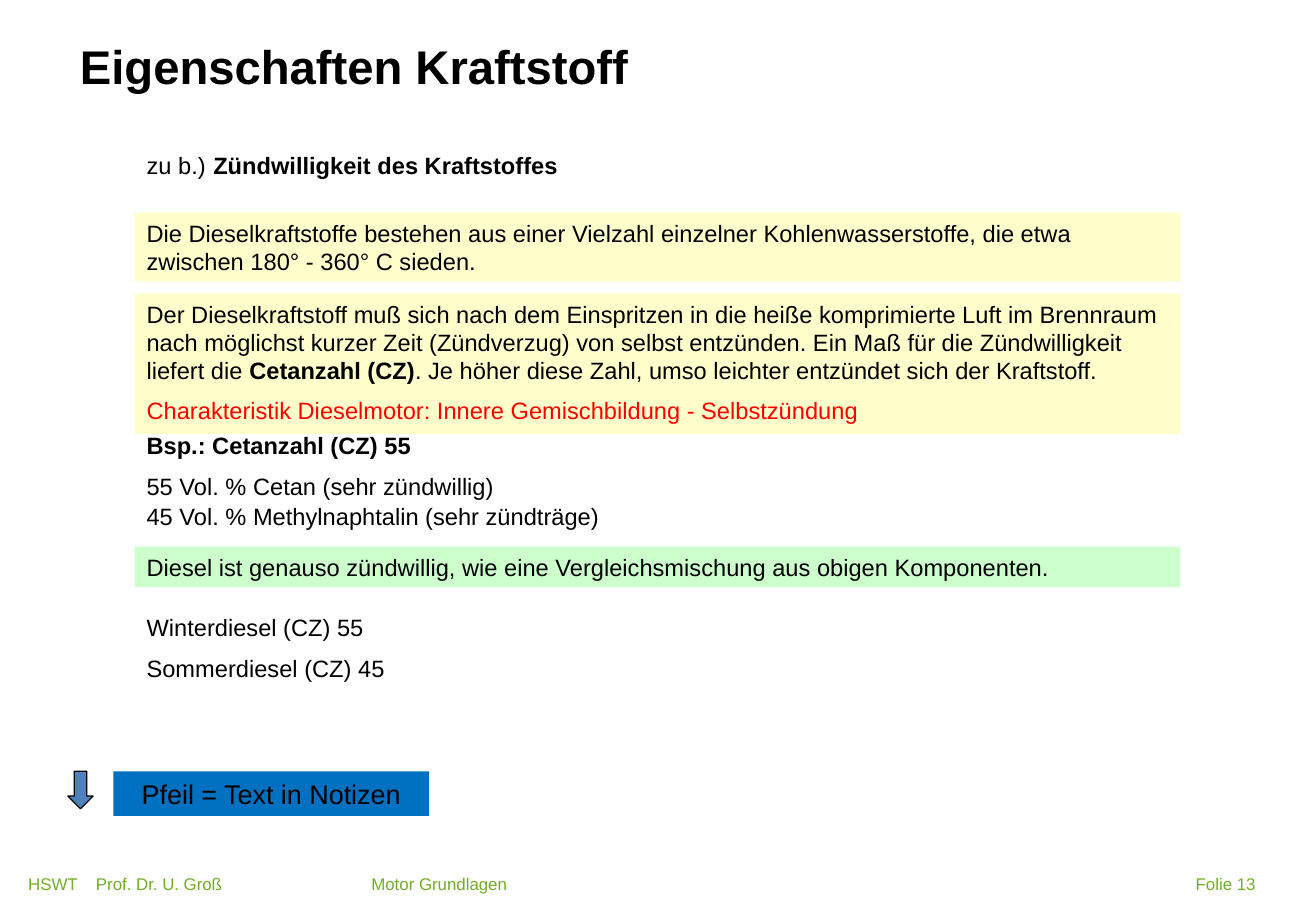
import pptx
import pptx.dml.color
import pptx.enum.shapes
import pptx.enum.text
import pptx.oxml
import pptx.oxml.ns
import pptx.util

PX = 7620  # EMU in one px, 120 px to the inch

THEME = {
    "font": "Arial",
    "black": "000000", "red": "FF0000", "footer_green": "71AD2A",
    "yellow": "FFFFCC", "mint": "CCFFCC", "blue": "0070C0", "arrow_blue": "4F81BD",
    "title": 28, "label": 16, "body": 14, "footer": 10,
}
ALIGN = pptx.enum.text.PP_ALIGN
SHAPES = pptx.enum.shapes.MSO_SHAPE


def rgb(name):
    return pptx.dml.color.RGBColor.from_string(THEME[name])


def write(frame, paragraphs, size="body", color="black", bold=False, align=ALIGN.LEFT):
    """Fill a frame; a paragraph is a text or a list of (text, format) spans."""
    frame.word_wrap = True
    for index, spans in enumerate(paragraphs):
        para = frame.add_paragraph() if index else frame.paragraphs[0]
        para.alignment = align
        if index:
            para.space_before = pptx.util.Pt(THEME[size] / 2)
        for text, style in [(spans, {})] if isinstance(spans, str) else spans:
            span = para.add_run()
            span.text = text
            span.font.name = THEME["font"]
            span.font.size = pptx.util.Pt(THEME[style.get("size", size)])
            span.font.bold = style.get("bold", bold)
            span.font.color.rgb = rgb(style.get("color", color))


deck = pptx.Presentation()
deck.slide_width, deck.slide_height = 1300 * PX, 900 * PX
page = deck.slides.add_slide(deck.slide_layouts[5])

title = page.shapes.title
title.left, title.top, title.width, title.height = 67 * PX, 25 * PX, 1144 * PX, 80 * PX
title.text_frame.vertical_anchor = pptx.enum.text.MSO_ANCHOR.MIDDLE
write(title.text_frame, ["Eigenschaften Kraftstoff"], size="title", bold=True)

# Footer
FOOTER_TOP, FOOTER_HEIGHT = 857, 29
number = page.shapes.add_textbox(1080 * PX, FOOTER_TOP * PX, 172 * PX, FOOTER_HEIGHT * PX)
write(number.text_frame, ["Folie 13"], size="footer", color="footer_green", align=ALIGN.RIGHT)

footer = page.shapes.add_textbox(16 * PX, FOOTER_TOP * PX, 1004 * PX, FOOTER_HEIGHT * PX)
write(footer.text_frame, ["HSWT\tProf. Dr. U. Groß\tMotor Grundlagen"],
      size="footer", color="footer_green")
footer_format = footer.text_frame.paragraphs[0].alignment
tab_list = pptx.oxml.parse_xml(
    f'<a:tabLst {pptx.oxml.ns.nsdecls("a")}>'
    + "".join(f'<a:tab pos="{stop * PX}" algn="l"/>' for stop in (67, 339))
    + "</a:tabLst>")
footer.text_frame.paragraphs[0]._p.get_or_add_pPr().append(tab_list)

# Text blocks: left, top, width, height, fill, paragraphs, format
LEFT, WIDTH, LINE = 133, 1033, 40
blocks = [
    (LEFT, 210, WIDTH, 68, "yellow", [
        "Die Dieselkraftstoffe bestehen aus einer Vielzahl einzelner Kohlenwasserstoffe, "
        "die etwa zwischen 180° - 360° C sieden."], {}),
    (LEFT, 140, WIDTH, 44, None, [[
        ("zu b.)", {}), (" ", {"size": "label"}),
        ("Zündwilligkeit des Kraftstoffes", {"bold": True})]], {}),
    (LEFT, 290, WIDTH, 139, "yellow", [
        [("Der Dieselkraftstoff muß sich nach dem Einspritzen in die heiße komprimierte Luft "
          "im Brennraum nach möglichst kurzer Zeit (Zündverzug) von selbst entzünden. "
          "Ein Maß für die Zündwilligkeit liefert die ", {}),
         ("Cetanzahl (CZ)", {"bold": True}),
         (". Je höher diese Zahl, umso leichter entzündet sich der Kraftstoff.", {})],
        [("Charakteristik Dieselmotor: Innere Gemischbildung - Selbstzündung",
          {"color": "red"})]], {}),
    (LEFT, 420, WIDTH, LINE, None, ["Bsp.: Cetanzahl (CZ) 55"], {"bold": True}),
    (LEFT, 460, WIDTH, LINE, None, ["55 Vol. % Cetan (sehr zündwillig)"], {}),
    (LEFT, 490, WIDTH, LINE, None, ["45 Vol. % Methylnaphtalin (sehr zündträge)"], {}),
    (LEFT, 540, WIDTH, LINE, "mint", [
        "Diesel ist genauso zündwillig, wie eine Vergleichsmischung "
        "aus obigen Komponenten."], {}),
    (LEFT, 600, WIDTH, LINE, None, ["Winterdiesel (CZ) 55"], {}),
    (LEFT, 640, WIDTH, LINE, None, ["Sommerdiesel (CZ) 45"], {}),
    (112, 762, 312, 44, "blue", ["Pfeil = Text in Notizen"],
     {"size": "label", "align": ALIGN.CENTER}),
]
for left, top, width, height, fill, paragraphs, style in blocks:
    area = [length * PX for length in (left, top, width, height)]
    if fill:
        box = page.shapes.add_shape(SHAPES.RECTANGLE, *area)
        box.shadow.inherit = False
        box.fill.solid()
        box.fill.fore_color.rgb = rgb(fill)
        box.line.fill.background()
    else:
        box = page.shapes.add_textbox(*area)
    box.text_frame.vertical_anchor = pptx.enum.text.MSO_ANCHOR.TOP
    box.text_frame.auto_size = pptx.enum.text.MSO_AUTO_SIZE.SHAPE_TO_FIT_TEXT
    write(box.text_frame, paragraphs, **style)

arrow = page.shapes.add_shape(SHAPES.DOWN_ARROW, 67 * PX, 762 * PX, 25 * PX, 37 * PX)
arrow.shadow.inherit = False
arrow.fill.solid()
arrow.fill.fore_color.rgb = rgb("arrow_blue")
arrow.line.color.rgb = rgb("black")
arrow.line.width = pptx.util.Pt(0.75)

deck.save("out.pptx")
